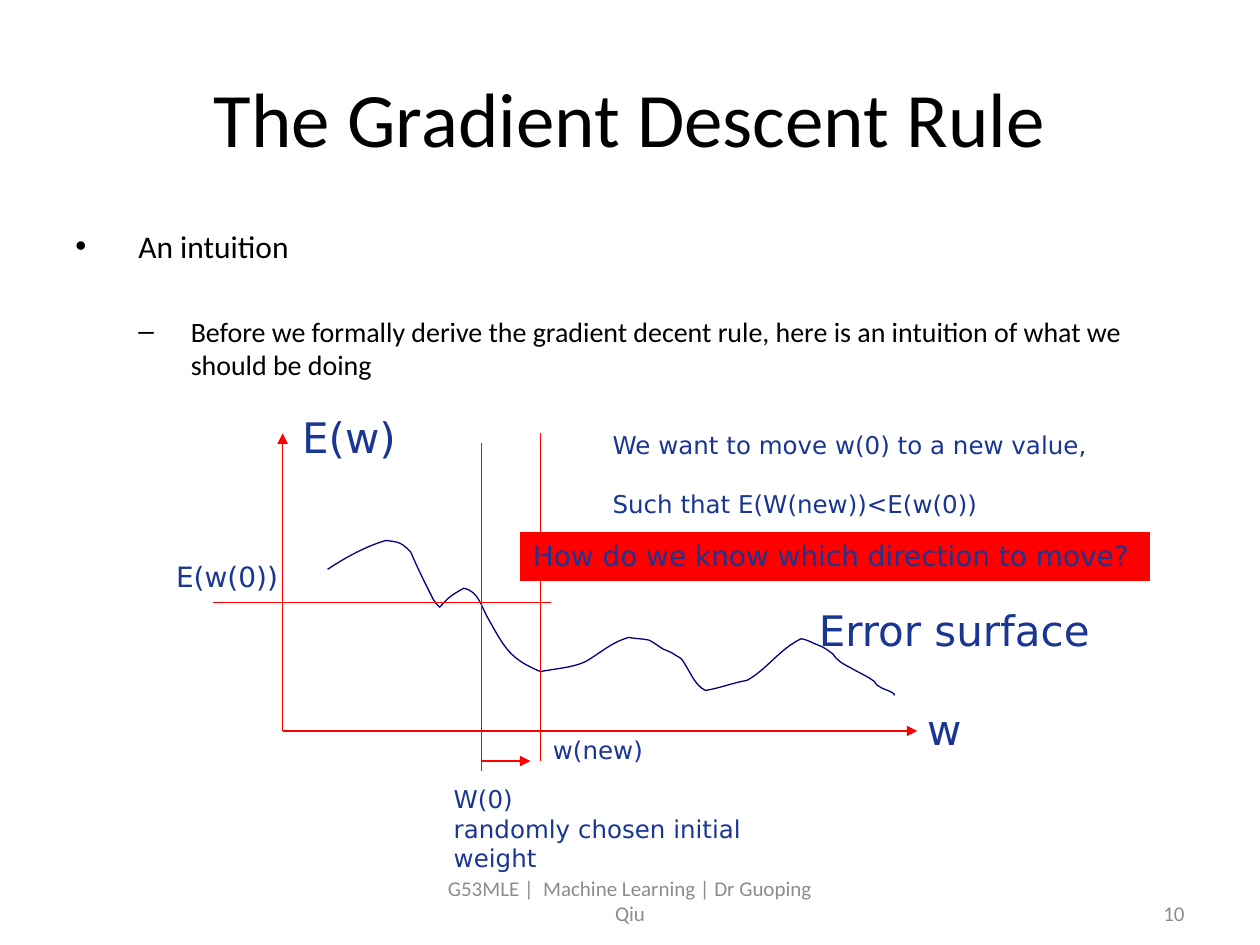
"""Build the gradient descent intuition slide with its error surface sketch."""
from dataclasses import dataclass
from typing import Any, Optional

import lxml.etree
import pptx
import pptx.dml.color
import pptx.enum.shapes
import pptx.enum.text
import pptx.oxml
import pptx.oxml.ns
import pptx.util

Pt = pptx.util.Pt
RGB = pptx.dml.color.RGBColor
ALIGN = pptx.enum.text.PP_ALIGN
ANCHOR = pptx.enum.text.MSO_ANCHOR
qn = pptx.oxml.ns.qn
Point = tuple[float, float]


@dataclass(frozen=True)
class Theme:
    body_font: str = "Calibri"
    label_font: str = "DejaVu Sans"
    bullet_font: str = "Arial"
    black: RGB = RGB(0x00, 0x00, 0x00)
    grey: RGB = RGB(0x8C, 0x8C, 0x8C)
    label: RGB = RGB(0x19, 0x36, 0x93)
    red: RGB = RGB(0xFF, 0x00, 0x00)
    curve: RGB = RGB(0x00, 0x00, 0x80)
    title: int = 44
    bullet: int = 18
    sub_bullet: int = 16
    footer: int = 12
    large: int = 24
    medium: int = 16
    small: int = 14
    stroke: float = 0.75


THEME = Theme()


@dataclass(frozen=True)
class Para:
    text: str
    size: int
    before: float = 0
    bullet: str = ""
    margin: float = 0
    hang: float = 0


@dataclass(frozen=True)
class Block:
    left: float
    top: float
    width: float
    height: float
    paras: tuple[Para, ...]
    font: str = THEME.label_font
    color: RGB = THEME.label
    align: ALIGN = ALIGN.LEFT
    anchor: ANCHOR = ANCHOR.TOP
    fill: Optional[RGB] = None


@dataclass(frozen=True)
class Line:
    start: Point
    end: Point
    arrow: bool = False


ORIGIN_X, AXIS_Y = 161.5, 417.7
W0_X, WNEW_X, STEP_Y = 275.1, 309, 434.9

BLOCKS = (
    Block(36, 21.6, 648, 90, (Para("The Gradient Descent Rule", THEME.title),),
          THEME.body_font, THEME.black, ALIGN.CENTER, ANCHOR.MIDDLE),
    Block(36, 126, 648, 356.4, (
        Para("An intuition", THEME.bullet, 3.6, "•", 36, 36),
        Para("Before we formally derive the gradient decent rule, here is an intuition "
             "of what we should be doing", THEME.sub_bullet, 28.5, "–", 66, 30)),
        THEME.body_font, THEME.black),
    Block(246, 500.4, 228, 28.8,
          (Para("G53MLE |  Machine Learning | Dr Guoping Qiu", THEME.footer),),
          THEME.body_font, THEME.grey, ALIGN.CENTER, ANCHOR.MIDDLE),
    Block(516, 507.3, 168, 28.8, (Para("10", THEME.footer),),
          THEME.body_font, THEME.grey, ALIGN.RIGHT, ANCHOR.MIDDLE),
    Block(522.7, 398.7, 34, 36, (Para("w", THEME.large),)),
    Block(165.6, 231.8, 71.3, 36, (Para("E(w)", THEME.large),)),
    Block(252.2, 444.7, 229.7, 41, (
        Para("W(0)", THEME.small),
        Para("randomly chosen initial weight", THEME.small))),
    Block(460.8, 342, 171.4, 36, (Para("Error surface", THEME.large),)),
    Block(343, 242.2, 295.2, 57.6, (
        Para("We want to move w(0) to a new value,", THEME.small),
        Para("Such that E(W(new))<E(w(0))", THEME.small, 16.8))),
    Block(93.6, 316.1, 77, 26.6, (Para("E(w(0))", THEME.medium),)),
    Block(308.9, 416.2, 67.7, 23.8, (Para("w(new)", THEME.small),)),
    Block(297.4, 304.3, 359.3, 27.4,
          (Para("How do we know which direction to move?", THEME.medium),),
          fill=THEME.red),
)

LINES = (
    Line((ORIGIN_X, AXIS_Y), (ORIGIN_X, 247.7), True),
    Line((ORIGIN_X, AXIS_Y), (524.2, AXIS_Y), True),
    Line((W0_X, 253.4), (W0_X, 440.6)),
    Line((121.7, 344.1), (314.6, 344.1)),
    Line((W0_X, STEP_Y), (303.1, STEP_Y), True),
    Line((WNEW_X, 247.7), (WNEW_X, STEP_Y)),
)

CURVE_START = (187.2, 325.4)
CURVE = (
    ((198, 318.2), (208.8, 312.5), (220.3, 308.9)),
    ((228.2, 309.6), (229.7, 310.3), (234.7, 315.4)),
    ((239, 325.4), (242.6, 332.6), (247.7, 342.7)),
    ((248.4, 344.2), (249.8, 345.6), (251.3, 347)),
    ((256.3, 341.3), (258.5, 339.8), (265, 336.2)),
    ((273.6, 337.7), (275, 347), (279.4, 354.2)),
    ((288.7, 370.8), (291.6, 376.6), (308.9, 383.8)),
    ((316.1, 382.3), (327.6, 381.6), (334.8, 378)),
    ((343.4, 373), (349.2, 367.2), (359.3, 364.3)),
    ((362.9, 365), (367.2, 365), (370.8, 365.8)),
    ((371.5, 365.8), (378.7, 370.8), (378.7, 370.8)),
    ((380.2, 371.5), (382.3, 372.2), (383.8, 373)),
    ((385.9, 374.4), (387.4, 375.1), (389.5, 376.6)),
    ((393.8, 382.3), (396.7, 391.7), (403.2, 394.6)),
    ((411.8, 393.1), (419, 390.2), (427, 388.8)),
    ((438.5, 382.3), (445.7, 370.8), (457.9, 365)),
    ((463.7, 366.5), (460.1, 365.8), (469.4, 369.4)),
    ((472.3, 370.8), (475.9, 373.7), (475.9, 373.7)),
    ((478.8, 378), (481.7, 379.4), (486, 381.6)),
    ((489.6, 383.8), (496.1, 386.6), (499.7, 389.5)),
    ((500.4, 391), (501.1, 391.7), (502.6, 392.4)),
    ((504, 393.8), (511.2, 395.3), (511.2, 397.4)),
)


def add_block(slide: Any, block: Block) -> None:
    box = [Pt(v) for v in (block.left, block.top, block.width, block.height)]
    if block.fill is None:
        sp = slide.shapes.add_textbox(*box)
    else:
        sp = slide.shapes.add_shape(pptx.enum.shapes.MSO_SHAPE.RECTANGLE, *box)
        sp.shadow.inherit = False
        sp.fill.solid()
        sp.fill.fore_color.rgb = block.fill
        sp.line.color.rgb = block.fill
        sp.line.width = Pt(THEME.stroke)
    tf = sp.text_frame
    tf.word_wrap = True
    tf.vertical_anchor = block.anchor
    for i, para in enumerate(block.paras):
        p = tf.add_paragraph() if i else tf.paragraphs[0]
        p.text = para.text
        p.alignment = block.align
        p.space_before = Pt(para.before)
        p.font.name = block.font
        p.font.size = Pt(para.size)
        p.font.color.rgb = block.color
        if para.bullet:
            ppr = p._p.get_or_add_pPr()
            ppr.set("marL", str(Pt(para.margin)))
            ppr.set("indent", str(-Pt(para.hang)))
            font = lxml.etree.Element(qn("a:buFont"), typeface=THEME.bullet_font)
            ppr.find(qn("a:spcBef")).addnext(font)
            font.addnext(lxml.etree.Element(qn("a:buChar"), char=para.bullet))


def add_line(slide: Any, line: Line) -> None:
    ends = [Pt(v) for v in line.start + line.end]
    cx = slide.shapes.add_connector(pptx.enum.shapes.MSO_CONNECTOR.STRAIGHT, *ends)
    cx.line.color.rgb = THEME.red
    cx.line.width = Pt(THEME.stroke)
    if line.arrow:
        lxml.etree.SubElement(cx.line._get_or_add_ln(), qn("a:tailEnd"), type="triangle")
    lxml.etree.SubElement(cx._element.spPr, qn("a:effectLst"))


def add_curve(slide: Any) -> None:
    """Draw the error surface, merging each three line segments into one Bézier."""
    points = [(Pt(x), Pt(y)) for segment in CURVE for x, y in segment]
    builder = slide.shapes.build_freeform(*(Pt(v) for v in CURVE_START))
    builder.add_line_segments(points, close=False)
    sp = builder.convert_to_shape()
    sp.shadow.inherit = False
    sp.fill.background()
    sp.line.color.rgb = THEME.curve
    sp.line.width = Pt(THEME.stroke)
    outline = next(sp._element.iter(qn("a:path")))
    segments = outline.findall(qn("a:lnTo"))
    for i in range(0, len(segments), 3):
        cubic = lxml.etree.SubElement(outline, qn("a:cubicBezTo"))
        for segment in segments[i:i + 3]:
            cubic.append(segment[0])
            outline.remove(segment)


def main() -> None:
    prs = pptx.Presentation()
    prs.slide_width, prs.slide_height = Pt(720), Pt(540)
    slide = prs.slides.add_slide(prs.slide_layouts[6])
    for block in BLOCKS:
        add_block(slide, block)
    add_curve(slide)
    for line in LINES:
        add_line(slide, line)
    prs.save("out.pptx")


if __name__ == "__main__":
    main()
